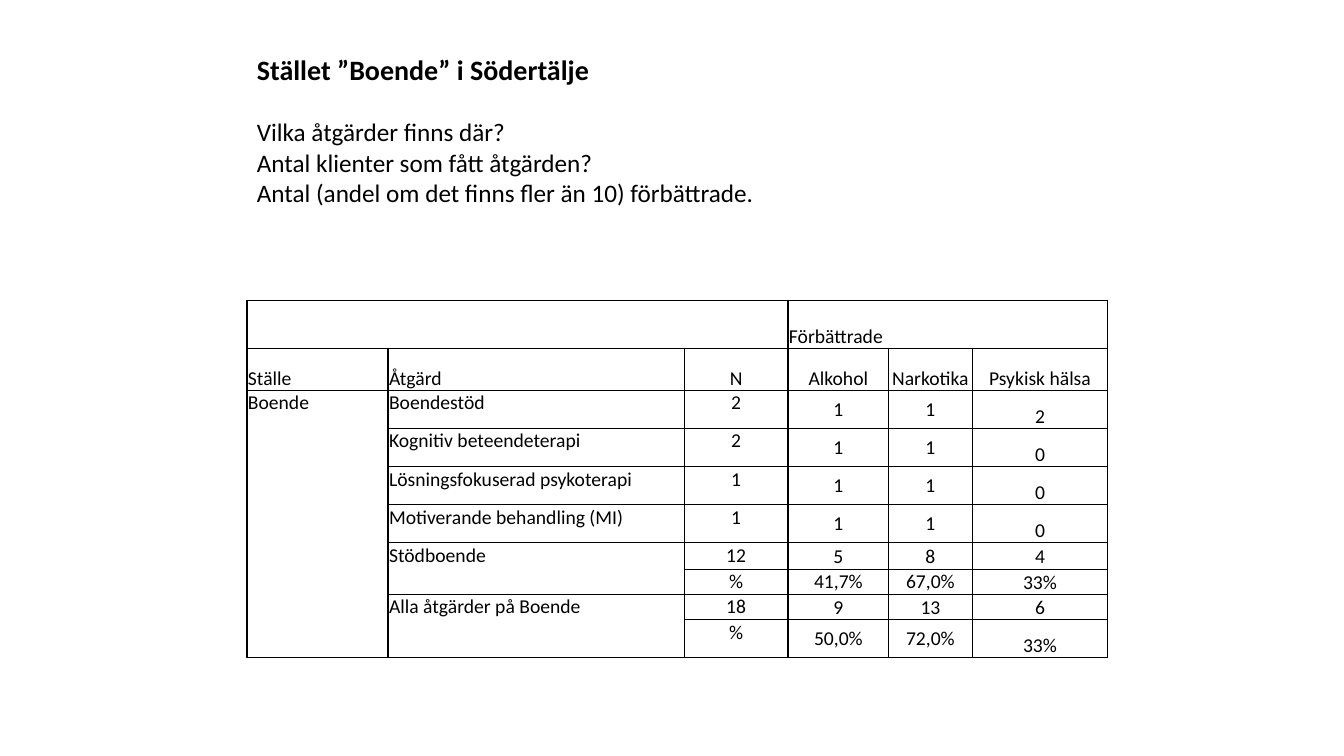
from pptx import Presentation
from pptx.util import Pt
from pptx.dml.color import RGBColor
from pptx.enum.text import MSO_ANCHOR, MSO_AUTO_SIZE, PP_ALIGN
from pptx.oxml import parse_xml
from pptx.oxml.ns import nsdecls

# Content
TITLE = "Stället ”Boende” i Södertälje"
ASKS = [
    "Vilka åtgärder finns där?",
    "Antal klienter som fått åtgärden?",
    "Antal (andel om det finns fler än 10) förbättrade.",
]
ROWS = [
    ("", "", "", "Förbättrade", "", ""),
    ("Ställe", "Åtgärd", "N", "Alkohol", "Narkotika", "Psykisk hälsa"),
    ("Boende", "Boendestöd", "2", "1", "1", "2"),
    ("", "Kognitiv beteendeterapi", "2", "1", "1", "0"),
    ("", "Lösningsfokuserad psykoterapi", "1", "1", "1", "0"),
    ("", "Motiverande behandling (MI)", "1", "1", "1", "0"),
    ("", "Stödboende", "12", "5", "8", "4"),
    ("", "", "%", "41,7%", "67,0%", "33%"),
    ("", "Alla åtgärder på Boende", "18", "9", "13", "6"),
    ("", "", "%", "50,0%", "72,0%", "33%"),
]
# First and last cell of each merged block, as (row, column)
SPANS = [((0, 0), (0, 2)), ((0, 3), (0, 5)), ((2, 0), (9, 0)),
         ((6, 1), (7, 1)), ((8, 1), (9, 1))]

# Look
FONT = "Calibri"
HUES = {"ink": "000000", "line": "000000"}
LEFT = 176.4
WIDTHS = [100.8, 211.5, 74.2, 72, 59.5, 97]
HEIGHTS = [34.4, 30] + [27.2] * 4 + [19, 18, 18, 27]
TOP, MID, LOW = MSO_ANCHOR.TOP, MSO_ANCHOR.MIDDLE, MSO_ANCHOR.BOTTOM
ANCHORS = [TOP, TOP, TOP, MID, MID, LOW]


def write(para, text, size=14, bold=False, align=PP_ALIGN.LEFT, after=0):
    para.alignment = align
    para.space_after = Pt(after)
    para.font.size = Pt(size)
    if not text:
        return
    run = para.add_run()
    run.text = text
    font = run.font
    font.name, font.size, font.bold = FONT, Pt(size), bold
    font.color.rgb = RGBColor.from_string(HUES["ink"])


def border(cell):
    props = cell._tc.get_or_add_tcPr()
    for side in "LRTB":
        props.append(parse_xml(
            f'<a:ln{side} {nsdecls("a")} w="{Pt(1)}"><a:solidFill>'
            f'<a:srgbClr val="{HUES["line"]}"/></a:solidFill></a:ln{side}>'))
    cell.fill.background()


def heading(slide):
    box = slide.shapes.add_textbox(Pt(LEFT), Pt(33.8), Pt(374.4), Pt(118.8))
    frame = box.text_frame
    frame.word_wrap = False
    frame.auto_size = MSO_AUTO_SIZE.SHAPE_TO_FIT_TEXT
    write(frame.paragraphs[0], TITLE, size=20, bold=True, after=22)
    for ask in ASKS:
        write(frame.add_paragraph(), ask, size=18)


def grid(slide):
    table = slide.shapes.add_table(
        len(ROWS), len(WIDTHS), Pt(LEFT), Pt(214.4),
        Pt(sum(WIDTHS)), Pt(sum(HEIGHTS))).table
    table.first_row = table.horz_banding = False
    for col, width in zip(table.columns, WIDTHS):
        col.width = Pt(width)
    for row, height in zip(table.rows, HEIGHTS):
        row.height = Pt(height)

    # Cells: headers sit low, numbers are centred
    for r, texts in enumerate(ROWS):
        for c, text in enumerate(texts):
            cell = table.cell(r, c)
            cell.margin_left = cell.margin_right = cell.margin_top = Pt(0.7)
            cell.margin_bottom = Pt(0)
            cell.vertical_anchor = LOW if r < 2 else ANCHORS[c]
            align = PP_ALIGN.CENTER if r and c > 1 else PP_ALIGN.LEFT
            write(cell.text_frame.paragraphs[0], text, align=align)
            border(cell)

    # Merged blocks
    for start, end in SPANS:
        table.cell(*start).merge(table.cell(*end))


def main():
    deck = Presentation()
    deck.slide_width, deck.slide_height = Pt(960), Pt(540)
    slide = deck.slides.add_slide(deck.slide_layouts[6])
    grid(slide)
    heading(slide)
    deck.save("out.pptx")


if __name__ == "__main__":
    main()
